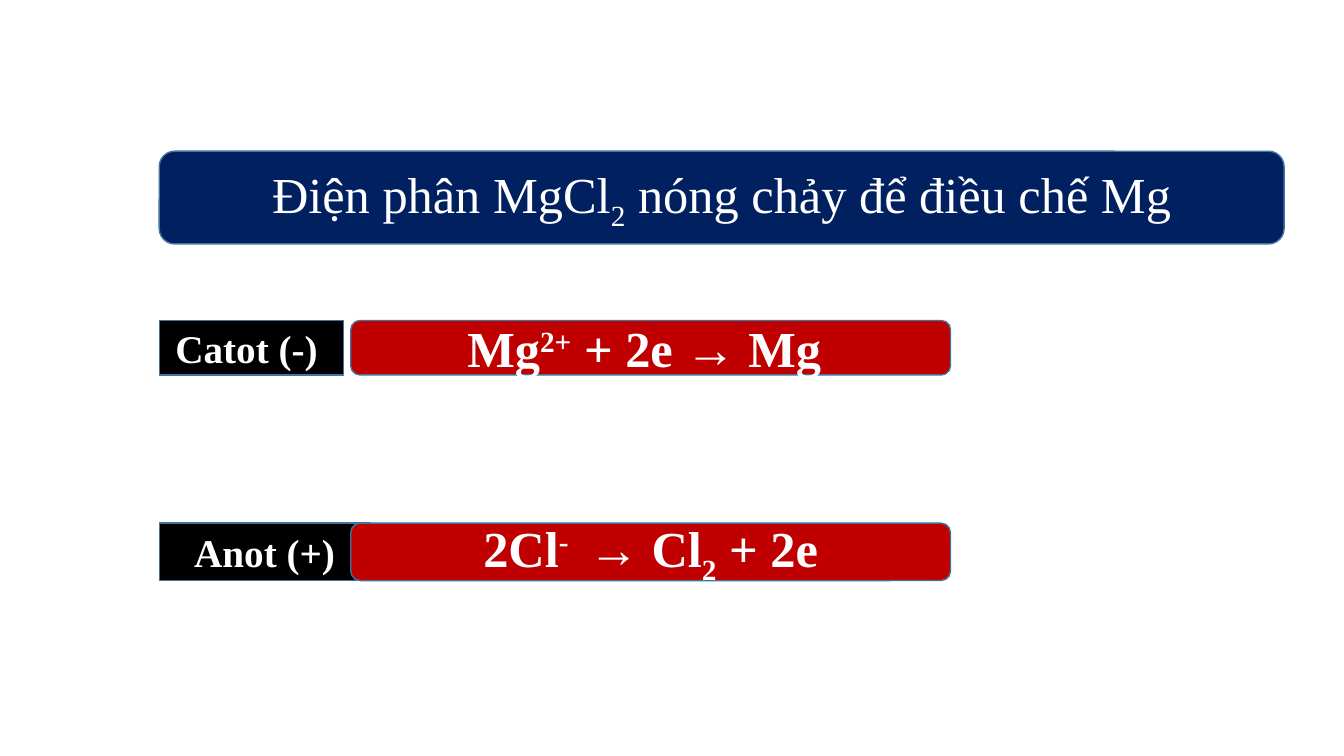
from pptx import Presentation, util as u
from pptx.dml.color import RGBColor
from pptx.enum import shapes, text

HUES = {"navy": "002060", "black": "000000", "red": "C00000",
        "edge": "43739E", "white": "FFFFFF"}
SUB, SUP = -25000, 30000
LEFT, MID = 113.76, 250.56
ROW_A, ROW_B = (228.96, 38.88), (373.68, 41.04)
KIND = shapes.MSO_SHAPE


def hue(name):
    return RGBColor.from_string(HUES[name])


deck = Presentation()
deck.slide_width, deck.slide_height = u.Pt(960), u.Pt(540)
slide = deck.slides.add_slide(deck.slide_layouts[6])

boxes = [
    (KIND.ROUNDED_RECTANGLE, LEFT, 803.52, (108, 66.24), "navy", 36, False,
     [("Điện phân MgCl", 0), ("2", SUB), (" nóng chảy để điều chế Mg", 0)]),
    (KIND.RECTANGLE, LEFT, 131.76, ROW_A, "black", 28, True,
     [("Catot (-) ", 0)]),
    (KIND.ROUNDED_RECTANGLE, MID, 428.4, ROW_A, "red", 36, True,
     [("Mg", 0), ("2+", SUP), (" + 2e → Mg ", 0)]),
    (KIND.FLOWCHART_PROCESS, LEFT, 150.48, ROW_B, "black", 28, True,
     [("Anot (+)", 0)]),
    (KIND.ROUNDED_RECTANGLE, MID, 428.4, ROW_B, "red", 36, True,
     [("2Cl", 0), ("- ", SUP), (" → Cl", 0), ("2", SUB), (" + 2e", 0)]),
]

for kind, left, width, (top, height), fill, size, bold, parts in boxes:
    box = slide.shapes.add_shape(
        kind, u.Pt(left), u.Pt(top), u.Pt(width), u.Pt(height))
    box.shadow.inherit = False
    box.fill.solid()
    box.fill.fore_color.rgb = hue(fill)
    box.line.color.rgb = hue("edge")
    box.line.width = u.Pt(1)
    frame = box.text_frame
    frame.word_wrap = True
    frame.vertical_anchor = text.MSO_ANCHOR.MIDDLE
    para = frame.paragraphs[0]
    para.alignment = text.PP_ALIGN.CENTER
    para.font.name = "Times New Roman"
    para.font.size = u.Pt(size)
    para.font.bold = bold
    para.font.color.rgb = hue("white")
    for words, shift in parts:
        run = para.add_run()
        run.text = words
        if shift:
            run._r.get_or_add_rPr().set("baseline", str(shift))

deck.save("out.pptx")
